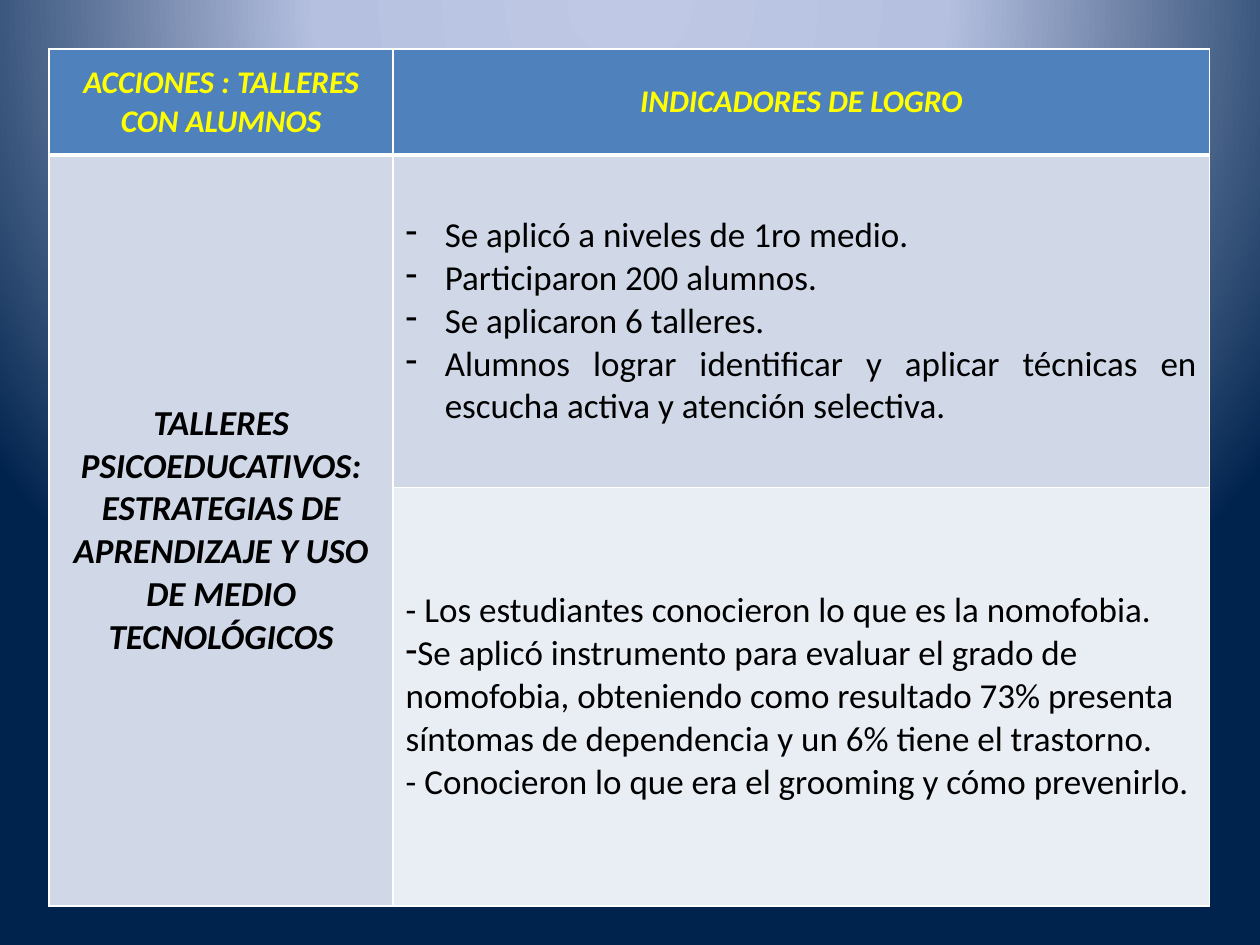
"""Builds a slide with a table of student workshops and their achievement indicators."""
from dataclasses import dataclass

from lxml import etree
from pptx import Presentation
from pptx.dml.color import RGBColor
from pptx.enum.text import MSO_ANCHOR, PP_ALIGN
from pptx.oxml.ns import qn
from pptx.util import Inches, Pt

CENTER, JUSTIFY, LEFT = PP_ALIGN.CENTER, PP_ALIGN.JUSTIFY, PP_ALIGN.LEFT
MIDDLE = MSO_ANCHOR.MIDDLE


@dataclass(frozen=True)
class Theme:
    """Colours, font and type sizes."""
    font: str = "Calibri"
    header_size: int = 18
    body_size: int = 20
    header_text: str = "FFFF00"
    body_text: str = "000000"
    header_fill: str = "4F81BD"
    band_dark: str = "D0D8E8"
    band_light: str = "E9EDF4"
    border: str = "FFFFFF"
    backdrop: tuple = ((0, "BFC9E5"), (40, "B5C0E0"), (100, "00234D"))


THEME = Theme()
HEADERS = ("ACCIONES : TALLERES CON ALUMNOS", "INDICADORES DE LOGRO")
WORKSHOP = ("TALLERES PSICOEDUCATIVOS: ESTRATEGIAS DE APRENDIZAJE "
            "Y USO DE MEDIO TECNOLÓGICOS")
LISTENING_RESULTS = (
    "Se aplicó a niveles de 1ro medio.",
    "Participaron 200 alumnos.",
    "Se aplicaron 6 talleres.",
    "Alumnos lograr identificar y aplicar técnicas en escucha activa y atención selectiva.",
)
TECHNOLOGY_RESULTS = (
    ("- Los estudiantes conocieron lo que es la nomofobia.", False),
    ("Se aplicó instrumento para evaluar el grado de nomofobia, obteniendo como resultado "
     "73% presenta síntomas de dependencia y un 6% tiene el trastorno.", True),
    ("- Conocieron lo que era el grooming y cómo prevenirlo.", False),
)
COLUMN_WIDTHS = (2.73, 6.48)
ROW_HEIGHTS = (0.84, 2.64, 3.32)


def add_solid(parent, color):
    """Append a solid fill to an XML element."""
    fill = etree.SubElement(parent, qn("a:solidFill"))
    etree.SubElement(fill, qn("a:srgbClr"), val=color)


def paint_backdrop(page):
    """Give the page a circular gradient centred above its top edge."""
    page.background.fill.gradient()
    gradient = page.element.find(".//" + qn("a:gradFill"))
    for child in list(gradient):
        gradient.remove(child)
    stops = etree.SubElement(gradient, qn("a:gsLst"))
    for position, color in THEME.backdrop:
        stop = etree.SubElement(stops, qn("a:gs"), pos=str(position * 1000))
        etree.SubElement(stop, qn("a:srgbClr"), val=color)
    circle = etree.SubElement(gradient, qn("a:path"), {"path": "circle"})
    etree.SubElement(circle, qn("a:fillToRect"), l="50000", t="-80000", r="50000", b="180000")


def style_cell(cell, fill, top=1, bottom=1):
    """Set the borders, fill and anchor of a cell."""
    props = cell._tc.get_or_add_tcPr()
    for side, width in {"L": 1, "R": 1, "T": top, "B": bottom}.items():
        line = etree.SubElement(props, qn(f"a:ln{side}"), w=str(Pt(width)))
        add_solid(line, THEME.border)
    cell.fill.solid()
    cell.fill.fore_color.rgb = RGBColor.from_string(fill)
    cell.vertical_anchor = MIDDLE


def add_dash(para, indent):
    """Give a paragraph a dash bullet with a hanging indent."""
    props = para._p.get_or_add_pPr()
    props.set("marL", str(Inches(indent)))
    props.set("indent", str(-Inches(indent)))
    etree.SubElement(props, qn("a:buFontTx"))
    etree.SubElement(props, qn("a:buChar"), char="-")


def write_cell(cell, lines, align, size, color, strong=False, indent=0):
    """Write (text, dashed) lines into a cell, one paragraph each."""
    frame = cell.text_frame
    formats = {"name": THEME.font, "size": Pt(size), "bold": strong, "italic": strong}
    for index, (text, dashed) in enumerate(lines):
        para = frame.add_paragraph() if index else frame.paragraphs[0]
        para.alignment = align
        if dashed:
            add_dash(para, indent)
        span = para.add_run()
        span.text = text
        for name, value in formats.items():
            setattr(span.font, name, value)
        span.font.color.rgb = RGBColor.from_string(color)


def add_results_table(page):
    """Add the table grid with its sizes, borders and fills."""
    table = page.shapes.add_table(
        len(ROW_HEIGHTS), len(COLUMN_WIDTHS), Inches(0.39), Inches(0.39),
        Inches(sum(COLUMN_WIDTHS)), Inches(sum(ROW_HEIGHTS))).table
    for column, width in zip(table.columns, COLUMN_WIDTHS):
        column.width = Inches(width)
    for row, height in zip(table.rows, ROW_HEIGHTS):
        row.height = Inches(height)
    row_styles = ((THEME.header_fill, 1, 3), (THEME.band_dark, 3, 1), (THEME.band_light, 1, 1))
    for row, (fill, top, bottom) in zip(table.rows, row_styles):
        for cell in row.cells:
            style_cell(cell, fill, top, bottom)
    table.cell(1, 0).merge(table.cell(2, 0))
    return table


def main():
    """Build and save the deck."""
    deck = Presentation()
    deck.slide_width, deck.slide_height = Inches(10), Inches(7.5)
    page = deck.slides.add_slide(deck.slide_layouts[6])
    paint_backdrop(page)
    table = add_results_table(page)
    for column, text in enumerate(HEADERS):
        write_cell(table.cell(0, column), [(text, False)], CENTER,
                   THEME.header_size, THEME.header_text, strong=True)
    body = {"size": THEME.body_size, "color": THEME.body_text}
    write_cell(table.cell(1, 0), [(WORKSHOP, False)], CENTER, strong=True, **body)
    write_cell(table.cell(1, 1), [(text, True) for text in LISTENING_RESULTS], JUSTIFY,
               indent=0.31, **body)
    write_cell(table.cell(2, 1), TECHNOLOGY_RESULTS, LEFT, **body)
    deck.save("out.pptx")


if __name__ == "__main__":
    main()
